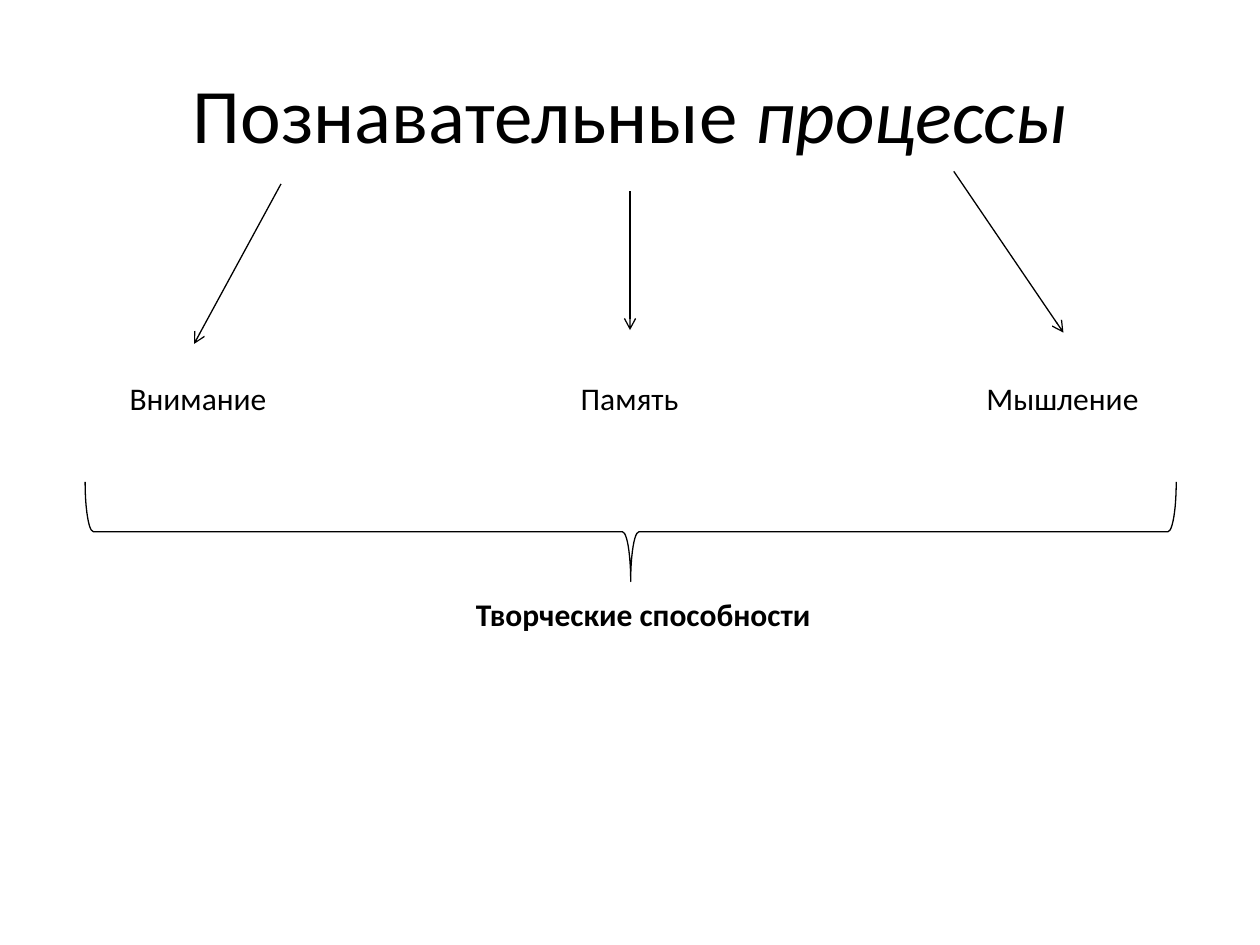
from lxml import etree
from pptx import Presentation
from pptx.dml.color import RGBColor
from pptx.enum.shapes import MSO_CONNECTOR, MSO_SHAPE
from pptx.enum.text import MSO_ANCHOR, MSO_AUTO_SIZE, PP_ALIGN
from pptx.oxml.ns import qn
from pptx.util import Inches, Pt

STRAIGHT = MSO_CONNECTOR.STRAIGHT
RIGHT_BRACE = MSO_SHAPE.RIGHT_BRACE
MIDDLE = MSO_ANCHOR.MIDDLE
GROW = MSO_AUTO_SIZE.SHAPE_TO_FIT_TEXT
LEFT, CENTER = PP_ALIGN.LEFT, PP_ALIGN.CENTER

COLORS = {"ink": "000000"}
TITLE_FORMAT = {"name": "Calibri", "size": Pt(44)}
LABEL_FORMAT = {"name": "Calibri", "size": Pt(18)}
LABEL_TOP, LABEL_HEIGHT = 2.96, 0.4

ARROWS = [
    ((2.23, 1.46), (1.54, 2.73)),
    ((5, 1.52), (5, 2.62)),
    ((7.57, 1.36), (8.44, 2.64)),
]
PROCESSES = [
    ("Внимание", 0.93, 1.3),
    ("Память", 4.51, 0.99),
    ("Мышление", 7.73, 1.42),
]


def add_span(para, text, formats):
    span = para.add_run()
    span.text = text
    for name, value in formats.items():
        setattr(span.font, name, value)
    span.font.color.rgb = RGBColor.from_string(COLORS["ink"])


def style_line(line):
    line.color.rgb = RGBColor.from_string(COLORS["ink"])
    line.width = Pt(0.75)


def fill_title(page):
    title = page.shapes.title
    title.left, title.top = Inches(0.5), Inches(0.27)
    title.width, title.height = Inches(9), Inches(1.25)
    title.text_frame.vertical_anchor = MIDDLE
    para = title.text_frame.paragraphs[0]
    para.alignment = CENTER
    add_span(para, "Познавательные ", TITLE_FORMAT)
    add_span(para, "процессы", TITLE_FORMAT | {"italic": True})


def add_arrow(page, start, end):
    points = [Inches(value) for value in start + end]
    arrow = page.shapes.add_connector(STRAIGHT, *points)
    style_line(arrow.line)
    properties = arrow.line._get_or_add_ln()
    etree.SubElement(properties, qn("a:tailEnd"), type="arrow")
    etree.SubElement(arrow._element.spPr, qn("a:effectLst"))


def add_label(page, text, left, top, width, formats, wrap=False, align=LEFT):
    box = page.shapes.add_textbox(
        Inches(left), Inches(top), Inches(width), Inches(LABEL_HEIGHT)
    )
    frame = box.text_frame
    frame.word_wrap = wrap
    frame.auto_size = GROW
    para = frame.paragraphs[0]
    para.alignment = align
    add_span(para, text, formats)
    return box


def add_brace(page):
    brace = page.shapes.add_shape(
        RIGHT_BRACE, Inches(4.61), Inches(-0.11), Inches(0.79), Inches(8.66)
    )
    brace.rotation = 90
    brace.shadow.inherit = False
    brace.fill.background()
    style_line(brace.line)


def main():
    deck = Presentation()
    deck.slide_width, deck.slide_height = Inches(10), Inches(7.5)
    page = deck.slides.add_slide(deck.slide_layouts[5])
    fill_title(page)
    for start, end in ARROWS:
        add_arrow(page, start, end)
    for text, left, width in PROCESSES:
        add_label(page, text, left, LABEL_TOP, width, LABEL_FORMAT)
    add_brace(page)
    result = add_label(
        page, "Творческие способности", 3.4, 4.67, 3.21,
        LABEL_FORMAT | {"bold": True}, wrap=True, align=CENTER,
    )
    result.text_frame.margin_left = Inches(0.3)
    deck.save("out.pptx")


if __name__ == "__main__":
    main()
